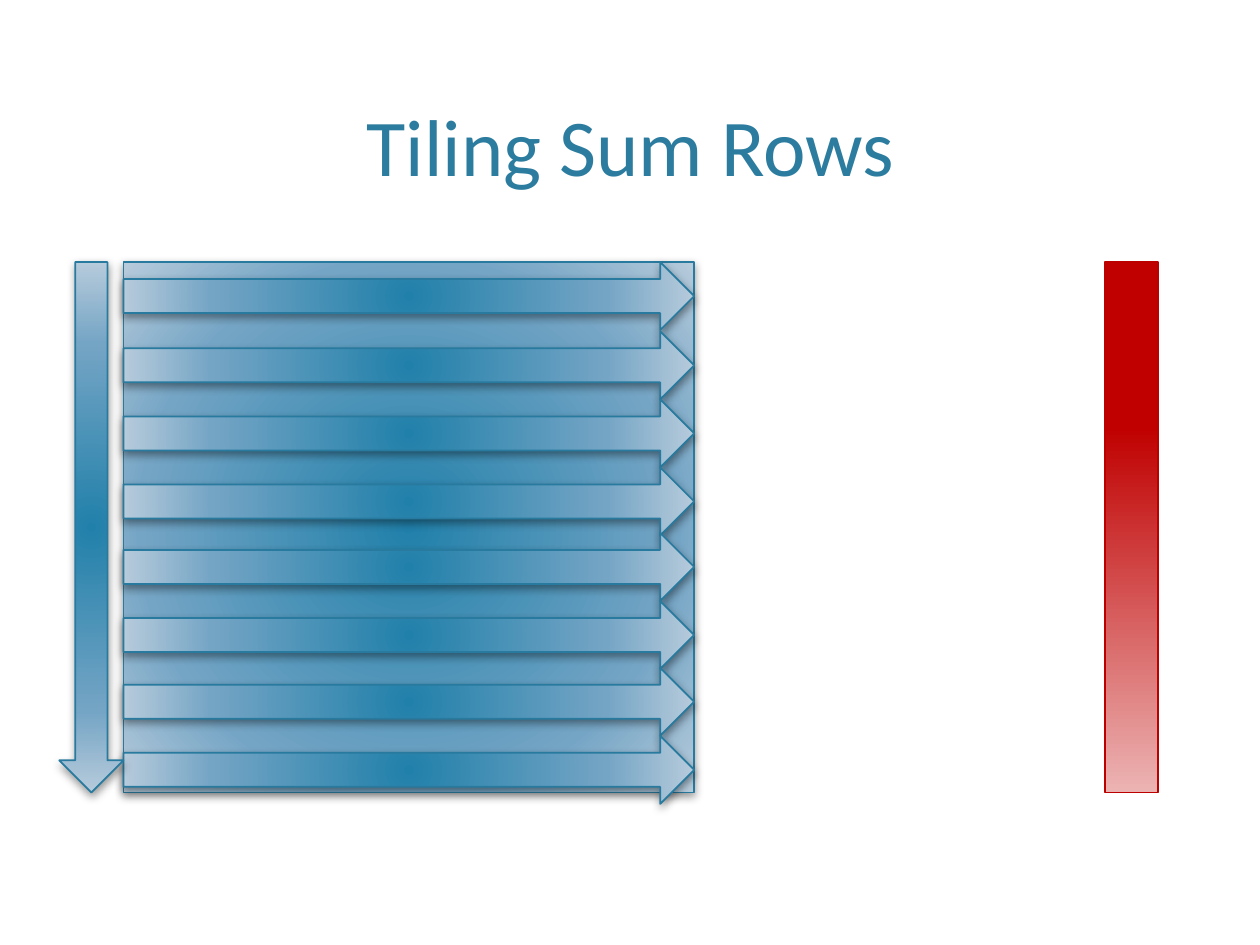
from pptx import Presentation
from pptx.dml.color import RGBColor
from pptx.enum.shapes import MSO_SHAPE
from pptx.enum.text import MSO_ANCHOR, PP_ALIGN
from pptx.oxml import parse_xml
from pptx.oxml.ns import nsdecls, qn
from pptx.util import Inches, Pt

RECT, RIGHT, DOWN = MSO_SHAPE.RECTANGLE, MSO_SHAPE.RIGHT_ARROW, MSO_SHAPE.DOWN_ARROW
COLORS = {"title": "2C7C9F", "edge": "287A9E", "deep": "2180AA", "mid": "75A5C5",
          "pale": "B8CCDC", "red": "C00000", "pink": "ECB3B3", "rim": "BC0000",
          "shade": "000000"}
RADIAL = ('<a:path path="circle">'
          '<a:fillToRect l="100000" t="100000" r="100000" b="100000"/></a:path>')
LINEAR = '<a:lin ang="5400000" scaled="0"/>'
BLUE = {"stops": [(0, "deep"), (69, "mid"), (100, "pale")], "kind": RADIAL,
        "edge": "edge", "shadow": True}
RED = {"stops": [(31, "red"), (100, "pink")], "kind": LINEAR,
       "edge": "rim", "shadow": False}

TOP, HEIGHT = 2.08, 4.21
LEFT, WIDTH = 0.98, 4.53
ROW = 0.54
ROW_TOPS = [2.08, 2.63, 3.17, 3.71, 4.23, 4.77, 5.3, 5.84]


def color(name):
    return RGBColor.from_string(COLORS[name])


def add_title(slide, text):
    title = slide.shapes.title
    place = {"left": 0.6, "top": 0.12, "width": 8.8, "height": 1.46}
    for key, value in place.items():
        setattr(title, key, Inches(value))
    frame = title.text_frame
    frame.text = text
    frame.vertical_anchor = MSO_ANCHOR.BOTTOM
    para = frame.paragraphs[0]
    para.alignment = PP_ALIGN.CENTER
    font = para.runs[0].font
    for key, value in {"name": "Calibri", "size": Pt(46), "bold": False}.items():
        setattr(font, key, value)
    font.color.rgb = color("title")


def set_fill(shape, stops, kind):
    """Put a gradient right after the shape's geometry."""
    marks = "".join(f'<a:gs pos="{pos * 1000}"><a:srgbClr val="{COLORS[name]}"/></a:gs>'
                    for pos, name in stops)
    shape._element.spPr.find(qn("a:prstGeom")).addnext(parse_xml(
        f'<a:gradFill {nsdecls("a")} rotWithShape="1">'
        f'<a:gsLst>{marks}</a:gsLst>{kind}</a:gradFill>'))


def add_shadow(shape):
    effects = shape._element.spPr.find(qn("a:effectLst"))
    effects.append(parse_xml(
        f'<a:outerShdw {nsdecls("a")} blurRad="{Pt(5)}" dist="{Pt(2)}" dir="5400000" '
        f'rotWithShape="0"><a:srgbClr val="{COLORS["shade"]}">'
        '<a:alpha val="40000"/></a:srgbClr></a:outerShdw>'))


def add_block(slide, kind, box, style):
    shape = slide.shapes.add_shape(kind, *map(Inches, box))
    set_fill(shape, style["stops"], style["kind"])
    shape.line.color.rgb = color(style["edge"])
    shape.line.width = Pt(1)
    shape.shadow.inherit = False
    if style["shadow"]:
        add_shadow(shape)


def main():
    deck = Presentation()
    deck.slide_width, deck.slide_height = Inches(10), Inches(7.5)
    slide = deck.slides.add_slide(deck.slide_layouts[5])
    add_title(slide, "Tiling Sum Rows")
    add_block(slide, RECT, (LEFT, TOP, WIDTH, HEIGHT), BLUE)
    for top in ROW_TOPS:
        add_block(slide, RIGHT, (LEFT, top, WIDTH, ROW), BLUE)
    add_block(slide, DOWN, (0.47, TOP, 0.51, HEIGHT), BLUE)
    add_block(slide, RECT, (8.77, TOP, 0.42, HEIGHT), RED)
    deck.save("out.pptx")


if __name__ == "__main__":
    main()
